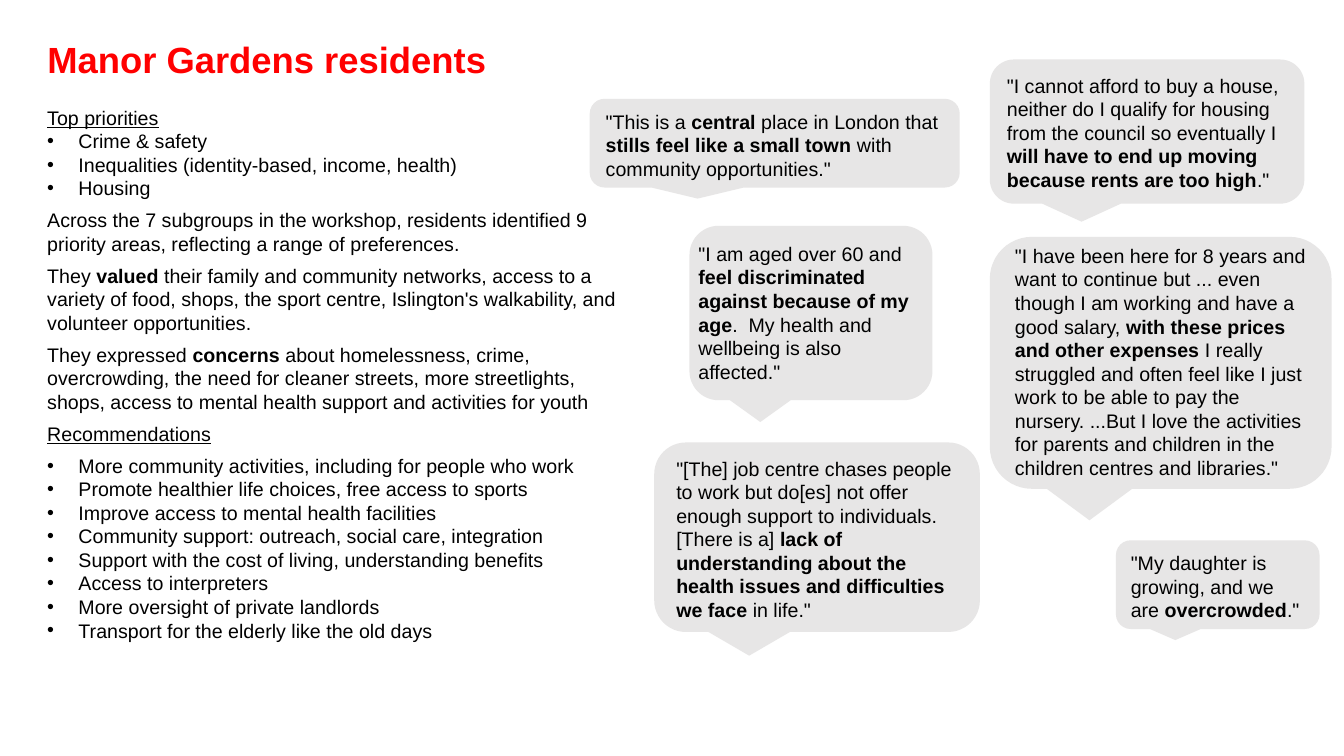
from lxml import etree
from pptx import Presentation
from pptx.dml.color import RGBColor
from pptx.enum.shapes import MSO_SHAPE
from pptx.enum.text import MSO_ANCHOR
from pptx.oxml.ns import qn
from pptx.util import Inches, Pt

CALLOUT = MSO_SHAPE.ROUNDED_RECTANGULAR_CALLOUT
TOP, MIDDLE = MSO_ANCHOR.TOP, MSO_ANCHOR.MIDDLE
WIDTH, HEIGHT = Inches(13.333), Inches(7.5)
COLOURS = {"title": "FF0000", "text": "000000", "bubble": "E7E6E6"}
BULLET_INDENT = Inches(0.31)
PARAGRAPH_GAP = Pt(6)
TITLE_FONT = {"name": "Arial", "size": Pt(26), "bold": True}
TEXT_FONT = {"name": "Arial", "size": Pt(14), "bold": False}

PRIORITIES = ["Crime & safety", "Inequalities (identity-based, income, health)", "Housing"]
FINDINGS = [
    "Across the 7 subgroups in the workshop, residents identified 9 priority areas, "
    "reflecting a range of preferences.",
    "They **valued** their family and community networks, access to a variety of food, shops, "
    "the sport centre, Islington's walkability, and volunteer opportunities.",
    "They expressed **concerns** about homelessness, crime, overcrowding, the need for "
    "cleaner streets, more streetlights, shops, access to mental health support and "
    "activities for youth",
]
RECOMMENDATIONS = [
    "More community activities, including for people who work",
    "Promote healthier life choices, free access to sports",
    "Improve access to mental health facilities",
    "Community support: outreach, social care, integration",
    "Support with the cost of living, understanding benefits",
    "Access to interpreters",
    "More oversight of private landlords",
    "Transport for the elderly like the old days",
]
QUOTES = [
    ((43.88, 13.07, 27.53, 11.73), (44.33, 13.87, 27.08, 8.8),
     '"This is a **central** place in London that **stills feel like a small town** '
     'with community opportunities."'),
    ((73.65, 7.87, 23.4, 19.07), (74.18, 9.07, 22.43, 15.73),
     '"I cannot afford to buy a house, neither do I qualify for housing from the council '
     'so eventually I **will have to end up moving because rents are too high**."'),
    ((51.3, 29.87, 18.08, 23.07), (51.23, 31.33, 17.4, 20.53),
     '"I am aged over 60 and **feel discriminated against because of my age**.  '
     'My health and wellbeing is also affected."'),
    ((73.65, 31.33, 25.43, 33.33), (74.78, 31.6, 23.63, 33.47),
     '"I have been here for 8 years and want to continue but ... even though I am working '
     'and have a good salary, **with these prices and other expenses** I really struggled '
     'and often feel like I just work to be able to pay the nursery. ...But I love the '
     'activities for parents and children in the children centres and libraries."'),
    ((48.68, 58.53, 24.23, 25.07), (49.58, 59.73, 22.8, 22.53),
     '"[The] job centre chases people to work but do[es] not offer enough support '
     'to individuals. [There is a] **lack of understanding about the health issues '
     'and difficulties we face** in life."'),
    ((83.03, 71.47, 15.15, 11.73), (83.4, 72.27, 14.4, 10),
     '"My daughter is growing, and we are **overcrowded**."'),
]


def place(area):
    """Turn percentages of the slide into left, top, width and height."""
    return [round(share * side / 100) for share, side in zip(area, (WIDTH, HEIGHT) * 2)]


def add_text_box(slide, area, anchor=TOP):
    """Add a wrapping text box and return its text frame."""
    frame = slide.shapes.add_textbox(*place(area)).text_frame
    frame.word_wrap = True
    frame.vertical_anchor = anchor
    return frame


def write(paragraph, text, formats=TEXT_FONT, colour="text", underline=False):
    """Write text in which double asterisks enclose bold words."""
    for index, part in enumerate(text.split("**")):
        run = paragraph.add_run()
        run.text = part
        for name, value in formats.items():
            setattr(run.font, name, value)
        run.font.bold = formats["bold"] or index % 2 == 1
        run.font.underline = underline
        run.font.color.rgb = RGBColor.from_string(COLOURS[colour])


def add_bullet(paragraph):
    """Give a paragraph a bullet with a hanging indent."""
    properties = paragraph._p.get_or_add_pPr()
    properties.set("marL", str(BULLET_INDENT))
    properties.set("indent", str(-BULLET_INDENT))
    etree.SubElement(properties, qn("a:buFont")).set("typeface", "Arial")
    etree.SubElement(properties, qn("a:buChar")).set("char", "•")


def add_title(slide, text):
    """Add the slide title."""
    paragraph = add_text_box(slide, (2.78, 4.67, 86.25, 6.93), MIDDLE).paragraphs[0]
    paragraph.line_spacing = 0.9
    write(paragraph, text, TITLE_FONT, "title")


def add_summary(slide):
    """Add the column of priorities, findings and recommendations."""
    frame = add_text_box(slide, (2.78, 13.33, 45, 73.87))
    heading = frame.paragraphs[0]
    write(heading, "Top priorities", underline=True)
    add_bullets(frame, PRIORITIES)
    frame.paragraphs[-1].space_after = PARAGRAPH_GAP
    for finding in FINDINGS:
        paragraph = frame.add_paragraph()
        paragraph.space_after = PARAGRAPH_GAP
        write(paragraph, finding)
    heading = frame.add_paragraph()
    heading.space_after = PARAGRAPH_GAP
    write(heading, "Recommendations", underline=True)
    add_bullets(frame, RECOMMENDATIONS)


def add_bullets(frame, items):
    """Append a bulleted list to a text frame."""
    for item in items:
        paragraph = frame.add_paragraph()
        add_bullet(paragraph)
        write(paragraph, item)


def add_quote(slide, bubble_area, text_area, text):
    """Add a speech bubble with a quotation over it."""
    bubble = slide.shapes.add_shape(CALLOUT, *place(bubble_area))
    bubble.shadow.inherit = False
    bubble.fill.solid()
    bubble.fill.fore_color.rgb = RGBColor.from_string(COLOURS["bubble"])
    bubble.line.fill.background()
    write(add_text_box(slide, text_area).paragraphs[0], text)


def main():
    """Build and save the slide."""
    presentation = Presentation()
    presentation.slide_width, presentation.slide_height = WIDTH, HEIGHT
    slide = presentation.slides.add_slide(presentation.slide_layouts[6])
    add_title(slide, "Manor Gardens residents")
    add_summary(slide)
    for quote in QUOTES:
        add_quote(slide, *quote)
    presentation.save("out.pptx")


if __name__ == "__main__":
    main()
